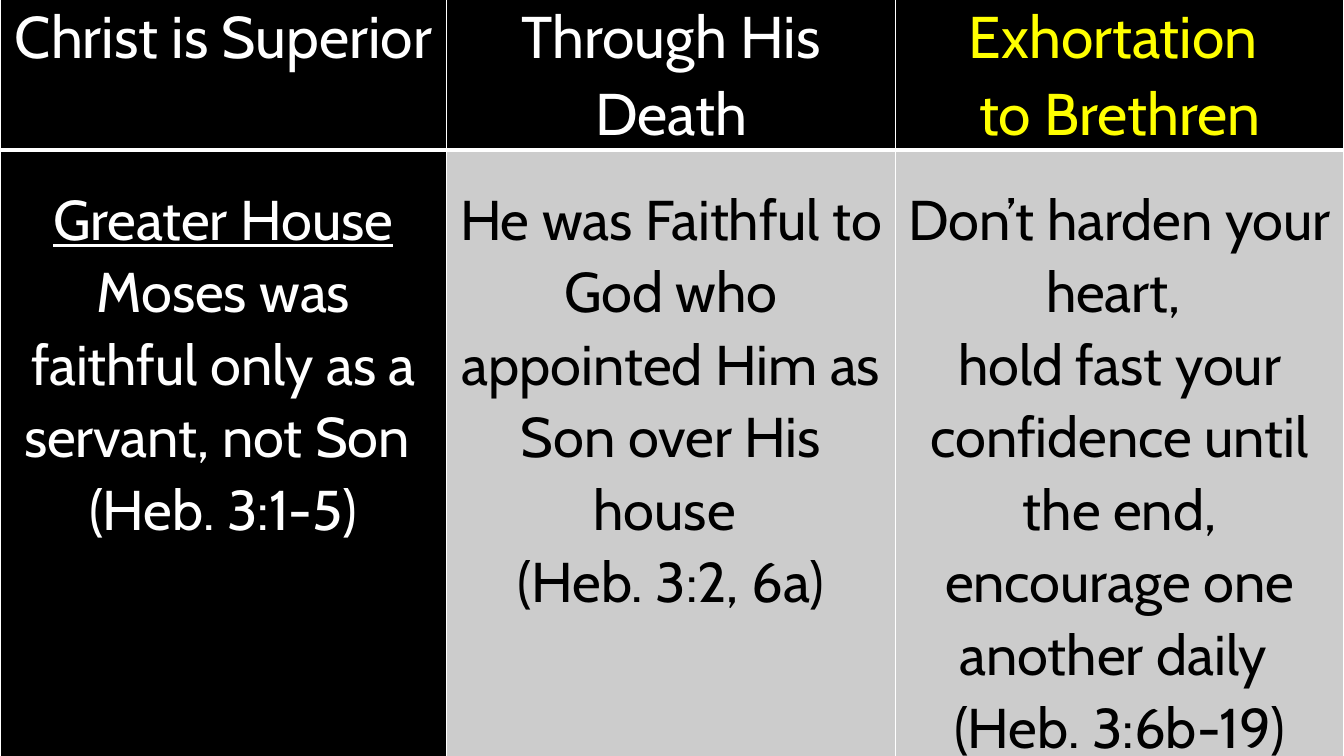
"""Build a slide with a two-row table on Hebrews 3."""
from lxml import etree
from pptx import Presentation
from pptx.dml.color import RGBColor
from pptx.enum.text import PP_ALIGN
from pptx.oxml.ns import qn
from pptx.util import Inches, Pt

CENTER = PP_ALIGN.CENTER
BLACK, WHITE, YELLOW, GRAY = "000000", "FFFFFF", "FFFF00", "CCCCCC"
COL_WIDTHS = [4.43, 4.45, 4.45]
ROW_HEIGHTS = [1.69, 6.31]
FONT_SIZES = [42, 40]
TOP_MARGINS = [0.17, 0.31]
CELLS = [
    [
        (["Christ is Superior"], WHITE, BLACK),
        (["Through His Death"], WHITE, BLACK),
        (["Exhortation ", "to Brethren"], YELLOW, BLACK),
    ],
    [
        (["Greater House",
          "Moses was faithful only as a servant, not Son ",
          "(Heb. 3:1-5)"], WHITE, BLACK),
        (["He was Faithful to God who appointed Him as Son over His house ",
          "(Heb. 3:2, 6a)"], BLACK, GRAY),
        (["Don’t harden your heart, ",
          "hold fast your confidence until the end, encourage one another daily ",
          "(Heb. 3:6b-19)"], BLACK, GRAY),
    ],
]


def rgb(color):
    return RGBColor.from_string(color)


def set_borders(cell, widths):
    tc_pr = cell._tc.get_or_add_tcPr()
    for i, (side, width) in enumerate(widths.items()):
        ln = etree.Element(qn("a:ln" + side), w=str(Pt(width)))
        fill = etree.SubElement(ln, qn("a:solidFill"))
        etree.SubElement(fill, qn("a:srgbClr"), val=WHITE)
        tc_pr.insert(i, ln)


prs = Presentation()
prs.slide_width, prs.slide_height = Inches(13.33), Inches(7.5)
s = prs.slides.add_slide(prs.slide_layouts[6])
s.background.fill.solid()
s.background.fill.fore_color.rgb = rgb(BLACK)

table = s.shapes.add_table(2, 3, 0, Inches(-0.2), Inches(13.33), Inches(8)).table
for col, width in zip(table.columns, COL_WIDTHS):
    col.width = Inches(width)
for row, height in zip(table.rows, ROW_HEIGHTS):
    row.height = Inches(height)

for i, row in enumerate(CELLS):
    for j, (lines, color, fill) in enumerate(row):
        cell = table.cell(i, j)
        cell.fill.solid()
        cell.fill.fore_color.rgb = rgb(fill)
        cell.margin_left = cell.margin_right = Inches(0.08)
        cell.margin_top, cell.margin_bottom = Inches(TOP_MARGINS[i]), 0
        set_borders(cell, {"L": 1, "R": 1, "T": 3 if i else 1, "B": 1 if i else 3})
        tf = cell.text_frame
        tf.text = "\n".join(lines)
        for p in tf.paragraphs:
            p.alignment = CENTER
            p.line_spacing = 1.07
            r = p.runs[0]
            r.font.name = "Cabin"
            r.font.size = Pt(FONT_SIZES[i])
            r.font.bold = False
            r.font.underline = r.text == "Greater House"
            r.font.color.rgb = rgb(color)

prs.save("out.pptx")
